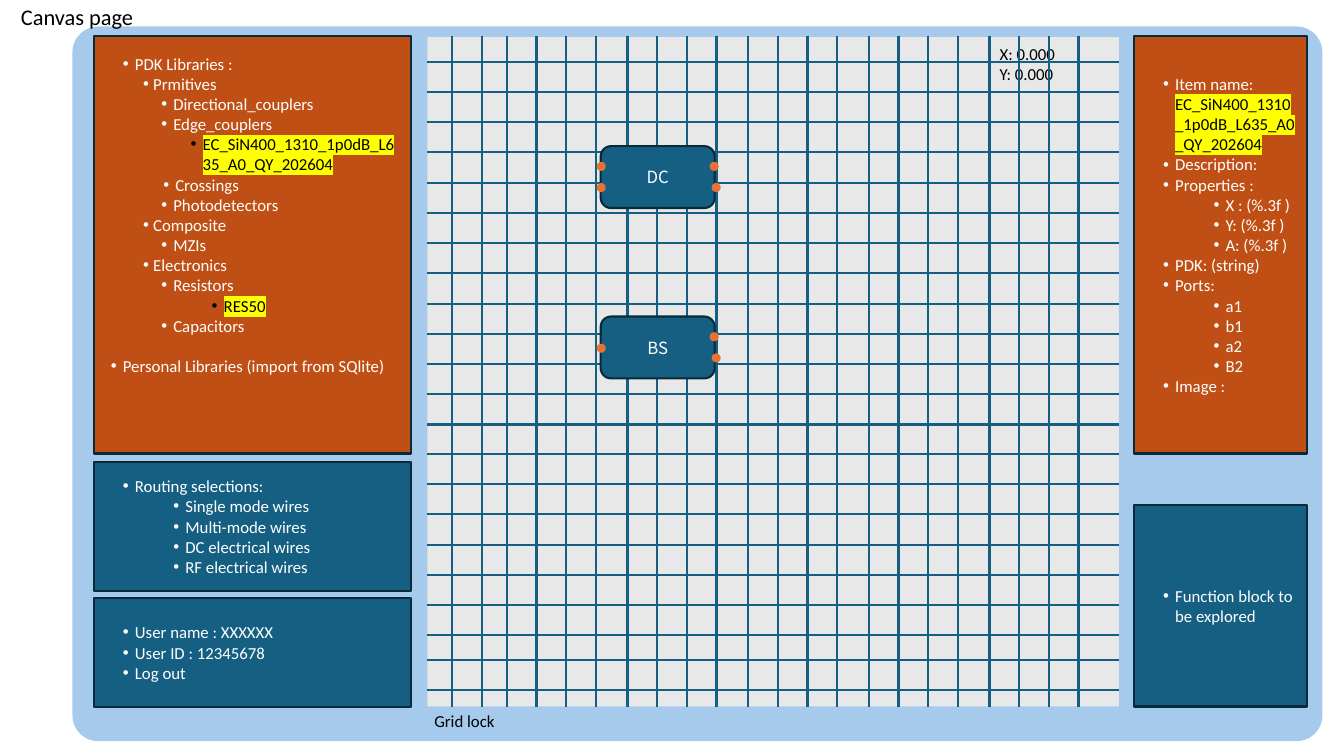
from dataclasses import dataclass

import pptx
import pptx.dml.color
import pptx.enum.shapes
import pptx.enum.text
import pptx.oxml
import pptx.oxml.ns
import pptx.util
from lxml import etree

Pt = pptx.util.Pt
RGBColor = pptx.dml.color.RGBColor
Shape = pptx.enum.shapes.MSO_SHAPE
qn = pptx.oxml.ns.qn

WHITE = RGBColor(0xFF, 0xFF, 0xFF)
BLACK = RGBColor(0x00, 0x00, 0x00)
SKY = RGBColor(0xA6, 0xCA, 0xEC)
GREY = RGBColor(0xE8, 0xE8, 0xE8)
RUST = RGBColor(0xC0, 0x4F, 0x15)
TEAL = RGBColor(0x15, 0x60, 0x82)
NAVY = RGBColor(0x09, 0x2A, 0x39)
ORANGE = RGBColor(0xE9, 0x71, 0x32)
YELLOW = RGBColor(0xFF, 0xFF, 0x00)

BODY_FONT = "Calibri"
DEVICE_FONT = "Noto Sans CJK SC"
LINE_HEIGHT = 14.4
TOP, BOTTOM = 25.9, 504.7
LEFT_X, LEFT_WIDTH = 67, 226.8
RIGHT_X, RIGHT_WIDTH = 810, 123.8
CANVAS_LEFT, CANVAS_RIGHT = 305.3, 799.2
PART_NAME = "EC_SiN400_1310_1p0dB_L635_A0_QY_202604"


@dataclass
class Item:
    text: str
    level: int = 0
    margin: float = 22.3
    marked: str = ""
    hanging: float = 8.6
    tab: float = 28.1
    space_before: float = 0


@dataclass
class Panel:
    left: float
    top: float
    width: float
    height: float
    fill: RGBColor
    items: list[Item]
    empty_lines: int = 0


@dataclass
class Device:
    name: str
    top: float
    ports: list[tuple[float, float]]


def library(text: str) -> Item:
    return Item(text, 1, 35.3, hanging=7.2, tab=35.3)


def cell(text: str, margin: float = 49.7) -> Item:
    return Item(text, 2, margin)


def sub_item(text: str) -> Item:
    return Item(text, 1, 58.3)


def add_block(shapes, kind, left: float, top: float, width: float, height: float,
              fill: RGBColor, outlined: bool = False):
    shape = shapes.add_shape(kind, Pt(left), Pt(top), Pt(width), Pt(height))
    shape.shadow.inherit = False
    shape.fill.solid()
    shape.fill.fore_color.rgb = fill
    if outlined:
        shape.line.color.rgb = NAVY
        shape.line.width = Pt(1.5)
    else:
        shape.line.fill.background()
    return shape


def format_run(run, color: RGBColor, size: float = 12, font: str = BODY_FONT) -> None:
    run.font.size = Pt(size)
    run.font.name = font
    run.font.color.rgb = color


def add_marked_run(paragraph, text: str) -> None:
    run = paragraph.add_run()
    run.text = text
    format_run(run, BLACK)
    highlight = etree.Element(qn("a:highlight"))
    etree.SubElement(highlight, qn("a:srgbClr")).set("val", str(YELLOW))
    run.font._element.find(qn("a:solidFill")).addnext(highlight)


def write_item(paragraph, item: Item) -> None:
    properties = paragraph._p.get_or_add_pPr()
    properties.set("marL", str(Pt(item.margin)))
    properties.set("indent", str(-Pt(item.hanging)))
    etree.SubElement(properties, qn("a:buFont")).set("typeface", "Arial")
    etree.SubElement(properties, qn("a:buChar")).set("char", "•")
    tabs = etree.SubElement(properties, qn("a:tabLst"))
    tab = etree.SubElement(tabs, qn("a:tab"))
    tab.set("pos", str(Pt(item.tab)))
    tab.set("algn", "l")
    paragraph.level = item.level
    paragraph.alignment = pptx.enum.text.PP_ALIGN.LEFT
    if item.space_before:
        paragraph.space_before = Pt(item.space_before)
    if item.text:
        paragraph.text = item.text
        format_run(paragraph.runs[0], WHITE)
    if item.marked:
        add_marked_run(paragraph, item.marked)


def add_panel(shapes, panel: Panel) -> None:
    shape = add_block(shapes, Shape.RECTANGLE, panel.left, panel.top, panel.width,
                      panel.height, panel.fill, outlined=True)
    text_frame = shape.text_frame
    text_frame.word_wrap = True
    text_frame.vertical_anchor = pptx.enum.text.MSO_ANCHOR.MIDDLE
    text_frame.margin_bottom = Pt(3.6 + panel.empty_lines * LINE_HEIGHT)
    for index, item in enumerate(panel.items):
        paragraph = text_frame.add_paragraph() if index else text_frame.paragraphs[0]
        write_item(paragraph, item)


def add_label(shapes, text: str, left: float, top: float, width: float,
              height: float, size: float = 12) -> None:
    shape = shapes.add_textbox(Pt(left), Pt(top), Pt(width), Pt(height))
    text_frame = shape.text_frame
    text_frame.text = text
    text_frame.word_wrap = True
    text_frame.auto_size = pptx.enum.text.MSO_AUTO_SIZE.SHAPE_TO_FIT_TEXT
    for paragraph in text_frame.paragraphs:
        format_run(paragraph.runs[0], BLACK, size)


def add_grid_line(shapes, x1: float, y1: float, x2: float, y2: float) -> None:
    line = shapes.add_connector(pptx.enum.shapes.MSO_CONNECTOR.STRAIGHT,
                                Pt(x1), Pt(y1), Pt(x2), Pt(y2))
    line.line.color.rgb = TEAL
    line.line.width = Pt(1.5)
    etree.SubElement(line._element.spPr, qn("a:effectLst"))


def grid_positions(first: float, pitch: float, step: float, last: float) -> list[float]:
    """Five bands of four lines, then a closing pair."""
    bands = [first + band * pitch + line * step for band in range(5) for line in range(4)]
    return bands + [last, last + step]


def add_device(shapes, device: Device) -> None:
    group = shapes.add_group_shape().shapes
    body = add_block(group, Shape.ROUNDED_RECTANGLE, 429.1, device.top, 81.4, 44.2,
                     TEAL, outlined=True)
    body.text_frame.text = device.name
    body.text_frame.vertical_anchor = pptx.enum.text.MSO_ANCHOR.MIDDLE
    paragraph = body.text_frame.paragraphs[0]
    paragraph.alignment = pptx.enum.text.PP_ALIGN.CENTER
    format_run(paragraph.runs[0], WHITE, font=DEVICE_FONT)
    for x, y in device.ports:
        add_block(group, Shape.OVAL, x, device.top + y, 6.5, 6.5, ORANGE)


PANELS = [
    Panel(RIGHT_X, TOP, RIGHT_WIDTH, 298.1, RUST, [
        Item("Item name: ", marked=PART_NAME), Item("Description:"), Item("Properties :"),
        sub_item("X : (%.3f )"), sub_item("Y: (%.3f )"), sub_item("A: (%.3f )"),
        Item("PDK: (string)"), Item("Ports:"),
        sub_item("a1"), sub_item("b1"), sub_item("a2"), sub_item("B2"),
        Item("Image :")], empty_lines=1),
    Panel(RIGHT_X, 360.7, RIGHT_WIDTH, 144, TEAL, [Item("Function block to be explored")]),
    Panel(LEFT_X, TOP, LEFT_WIDTH, 298.1, RUST, [
        Item("PDK Libraries :"), library("Prmitives"),
        cell("Directional_couplers"), cell("Edge_couplers"),
        Item("", 3, 70.6, marked=PART_NAME),
        cell("Crossings", 51.1), cell("Photodetectors"),
        library("Composite"), cell("MZIs"),
        library("Electronics"), cell("Resistors"),
        Item("", 3, 85.7, marked="RES50"), cell("Capacitors"),
        Item("Personal Libraries (import from SQlite)", 1, 13.7,
             space_before=LINE_HEIGHT)], empty_lines=3),
    Panel(LEFT_X, 427, LEFT_WIDTH, 77.8, TEAL, [
        Item("User name : XXXXXX"), Item("User ID : 12345678"), Item("Log out")]),
    Panel(LEFT_X, 329.8, LEFT_WIDTH, 92.2, TEAL, [
        Item("Routing selections:"), sub_item("Single mode wires"),
        sub_item("Multi-mode wires"), sub_item("DC electrical wires"),
        sub_item("RF electrical wires")]),
]
RIGHT_PORTS = [(506.9, 11.2), (508.3, 26.3)]
DEVICES = [
    Device("DC", 104.4, [(426.2, 11.2), (426.2, 26.3)] + RIGHT_PORTS),
    Device("BS", 226.1, [(426.2, 19.4)] + RIGHT_PORTS),
]


def main() -> None:
    presentation = pptx.Presentation()
    presentation.slide_width, presentation.slide_height = Pt(960), Pt(540)
    slide = presentation.slides.add_slide(presentation.slide_layouts[6])
    shapes = slide.shapes

    # Page frame and drawing canvas
    frame = add_block(shapes, Shape.ROUNDED_RECTANGLE, 51.8, 18.9, 892.8, 510.5, SKY)
    frame.adjustments[0] = 0.036
    add_block(shapes, Shape.RECTANGLE, CANVAS_LEFT, 26.6, CANVAS_RIGHT - CANVAS_LEFT,
              478.1, GREY)

    # Side panels
    for panel in PANELS:
        add_panel(shapes, panel)

    # Cursor readout and grid
    add_label(shapes, "X: 0.000\nY: 0.000", 707, 27.4, 87.1, 36)
    for y in grid_positions(44.6, 86.2, 21.4, 471.4):
        add_grid_line(shapes, CANVAS_LEFT, y, CANVAS_RIGHT, y)
    columns = shapes.add_group_shape().shapes
    for x in grid_positions(770.4, -86.2, -21.2, 344.2):
        add_grid_line(columns, x, 25.5, x, BOTTOM)

    # Devices and captions
    for device in DEVICES:
        add_device(shapes, device)
    add_label(shapes, "Grid lock", 303.1, 504, 87.1, 21.6)
    add_label(shapes, "Canvas page", 7.9, -1.4, 154.8, 26.6, size=16)

    presentation.save("out.pptx")


if __name__ == "__main__":
    main()
